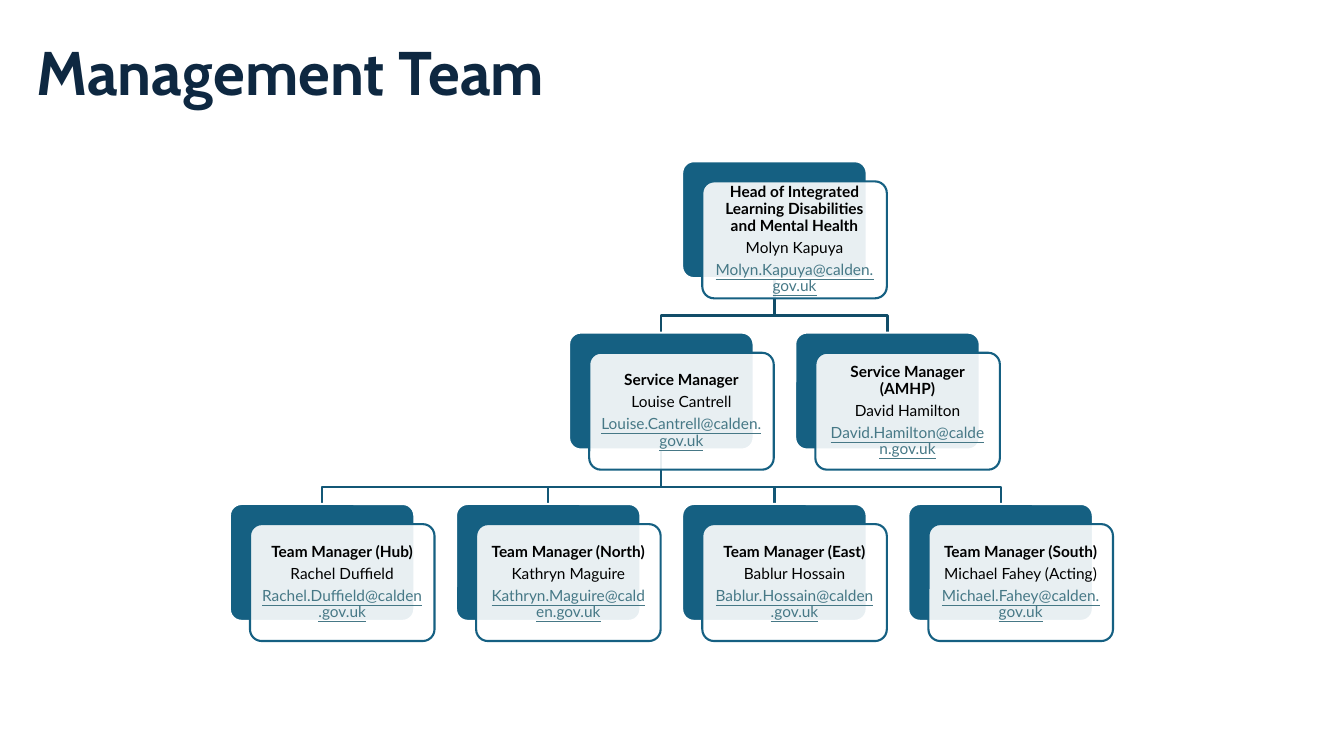
from dataclasses import dataclass

from lxml.etree import SubElement
from pptx import Presentation
from pptx.dml.color import RGBColor
from pptx.enum.shapes import MSO_SHAPE as SHAPE
from pptx.enum.text import MSO_ANCHOR as ANCHOR, MSO_AUTO_SIZE as AUTO_SIZE, PP_ALIGN as ALIGN
from pptx.oxml.ns import qn
from pptx.util import Inches, Pt


@dataclass(frozen=True)
class Theme:
    ink: str = "0E2841"
    teal: str = "156082"
    paper: str = "FFFFFF"
    text: str = "000000"
    email: str = "467886"
    links: tuple = ("114D68", "135776")  # one colour for each level of the chart
    title_font: str = "Cabin"
    body_font: str = "Lato"
    title_size: float = 44
    body_size: float = 11
    line_width: float = 1.5
    line_spacing: float = 0.9


THEME = Theme()

# Chart grid in inches
LEFT, TOP = 2.28, 1.6
COL, ROW = 2.243, 1.7
CARD_W, CARD_H = 1.83, 1.16
OFFSET = 0.2
BUS_GAP = 0.17
OPACITY = 90


@dataclass(frozen=True)
class Post:
    col: float
    row: int
    role: str
    person: str
    email: str
    reports: tuple = ()


TEAM = [
    Post(0, 2, "Team Manager (Hub)", "Rachel Duffield", "Rachel.Duffield@calden.gov.uk"),
    Post(1, 2, "Team Manager (North)", "Kathryn Maguire", "Kathryn.Maguire@calden.gov.uk"),
    Post(2, 2, "Team Manager (East)", "Bablur Hossain", "Bablur.Hossain@calden.gov.uk"),
    Post(3, 2, "Team Manager (South)", "Michael Fahey (Acting)", "Michael.Fahey@calden.gov.uk"),
]
SERVICES = [
    Post(1.5, 1, "Service Manager", "Louise Cantrell", "Louise.Cantrell@calden.gov.uk",
         tuple(TEAM)),
    Post(2.5, 1, "Service Manager (AMHP)", "David Hamilton", "David.Hamilton@calden.gov.uk"),
]
HEAD = Post(2, 0, "Head of Integrated Learning Disabilities and Mental Health",
            "Molyn Kapuya", "Molyn.Kapuya@calden.gov.uk", tuple(SERVICES))


def rgb(value):
    return RGBColor.from_string(value)


def corner(post):
    return LEFT + post.col * COL, TOP + post.row * ROW


def add_title(s, text):
    title = s.shapes.title
    title.left, title.top = Inches(0.26), Inches(0.36)
    title.width, title.height = Inches(11.5), Inches(0.77)
    tf = title.text_frame
    tf.text = text
    tf.auto_size = AUTO_SIZE.NONE
    tf.vertical_anchor = ANCHOR.MIDDLE
    p = tf.paragraphs[0]
    p.alignment = ALIGN.LEFT
    p.line_spacing = THEME.line_spacing
    style_font(p.font, THEME.title_font, THEME.title_size, THEME.ink, bold=True)


def style_font(font, name, size, color, bold=False, underline=False):
    font.name, font.size = name, Pt(size)
    font.color.rgb = rgb(color)
    font.bold, font.underline = bold, underline


def add_link(s, parent, child):
    """Draw the elbow line from a post to one of its reports."""
    x0, y0 = corner(parent)
    x1, y1 = corner(child)
    x0, x1, y0 = x0 + CARD_W / 2, x1 + CARD_W / 2, y0 + CARD_H
    bus = y1 - BUS_GAP
    points = [(Inches(x), Inches(y)) for x, y in ((x0, y0), (x0, bus), (x1, bus), (x1, y1))]
    builder = s.shapes.build_freeform(*points[0])
    builder.add_line_segments(points[1:], close=False)
    sp = builder.convert_to_shape()
    sp.shadow.inherit = False
    sp.fill.background()
    sp.line.color.rgb = rgb(THEME.links[parent.row])
    sp.line.width = Pt(THEME.line_width)


def add_card(s, x, y, fill, line):
    sp = s.shapes.add_shape(SHAPE.ROUNDED_RECTANGLE, Inches(x), Inches(y),
                            Inches(CARD_W), Inches(CARD_H))
    sp.adjustments[0] = 0.1
    sp.shadow.inherit = False
    sp.fill.solid()
    sp.fill.fore_color.rgb = rgb(fill)
    sp.line.color.rgb = rgb(line)
    sp.line.width = Pt(THEME.line_width)
    return sp


def set_opacity(sp, percent):
    color = sp.fill._xPr.find(qn("a:solidFill")).find(qn("a:srgbClr"))
    SubElement(color, qn("a:alpha")).set("val", str(percent * 1000))


def write_post(tf, post):
    tf.word_wrap = True
    tf.vertical_anchor = ANCHOR.MIDDLE
    tf.margin_left = tf.margin_right = tf.margin_top = tf.margin_bottom = Inches(0.08)
    lines = [(post.role, THEME.text, True, False),
             (post.person, THEME.text, False, False),
             (post.email, THEME.email, False, True)]
    tf.text = "\n".join(line[0] for line in lines)
    for p, (_, color, bold, underline) in zip(tf.paragraphs, lines):
        p.alignment = ALIGN.CENTER
        p.line_spacing = THEME.line_spacing
        p.space_after = Pt(0.35 * THEME.body_size)
        style_font(p.font, THEME.body_font, THEME.body_size, color, bold, underline)


def add_post(s, post):
    x, y = corner(post)
    add_card(s, x, y, THEME.teal, THEME.paper)
    front = add_card(s, x + OFFSET, y + OFFSET, THEME.paper, THEME.teal)
    set_opacity(front, OPACITY)
    write_post(front.text_frame, post)


def main():
    prs = Presentation()
    prs.slide_width, prs.slide_height = Inches(13.33), Inches(7.5)
    s = prs.slides.add_slide(prs.slide_layouts[5])
    add_title(s, "Management Team")
    posts = [HEAD, *SERVICES, *TEAM]
    for post in posts:
        for report in post.reports:
            add_link(s, post, report)
    for post in posts:
        add_post(s, post)
    prs.save("out.pptx")


if __name__ == "__main__":
    main()
